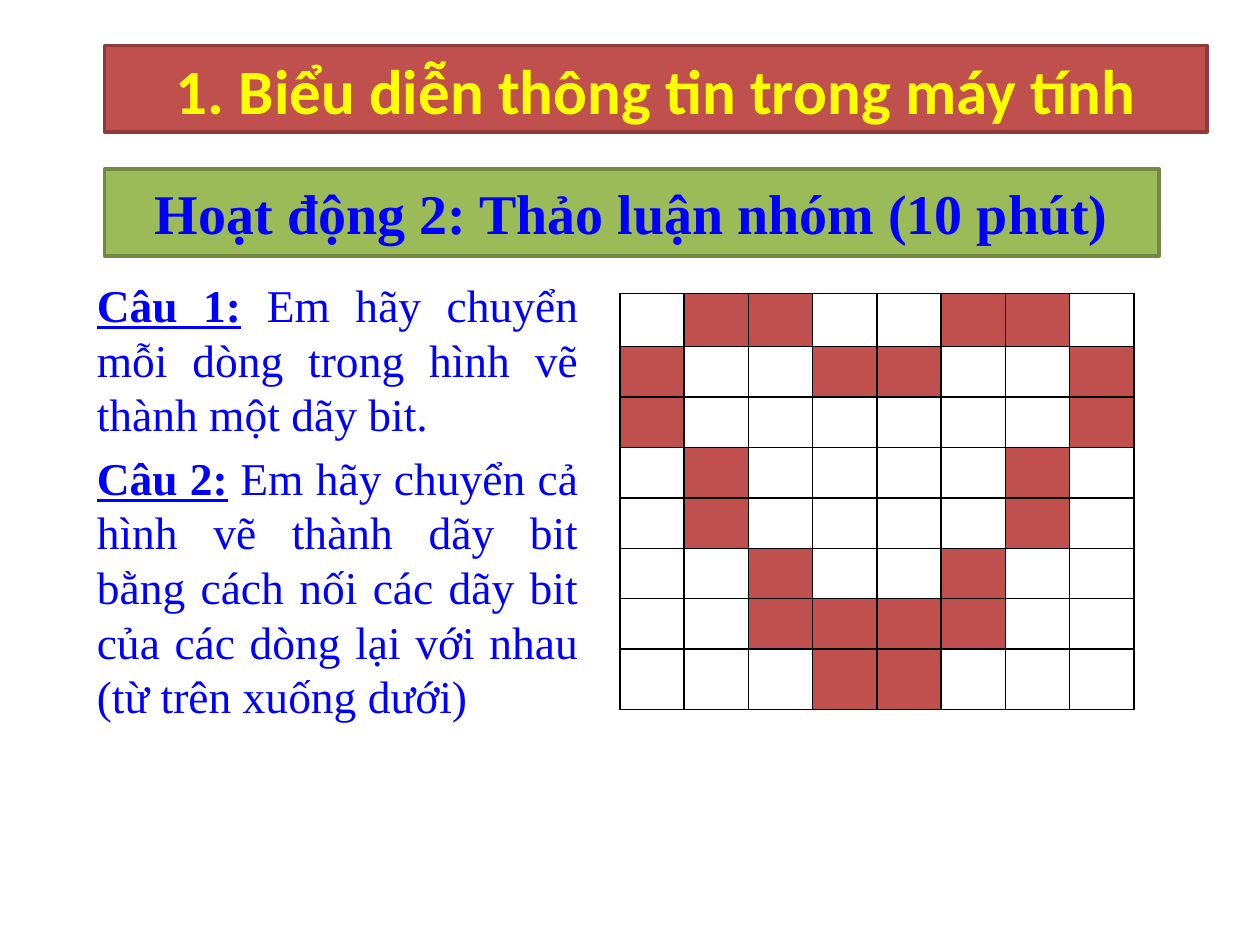
from lxml import etree
from pptx import Presentation
from pptx import util as u
from pptx.dml.color import RGBColor
from pptx.enum import shapes, text
from pptx.oxml import ns

RED = RGBColor(0xC0, 0x50, 0x4D)
DARK_RED = RGBColor(0x8E, 0x3B, 0x39)
GREEN = RGBColor(0x9B, 0xBB, 0x59)
DARK_GREEN = RGBColor(0x73, 0x8A, 0x42)
BLUE = RGBColor(0x00, 0x00, 0xFF)
YELLOW = RGBColor(0xFF, 0xFF, 0x00)
WHITE = RGBColor(0xFF, 0xFF, 0xFF)
SERIF = "Times New Roman"

BANNERS = [
    ("1. Biểu diễn thông tin trong máy tính",
     (0.83, 0.36, 8.75, 0.69), RED, DARK_RED, "Calibri", 36, YELLOW),
    ("Hoạt động 2: Thảo luận nhóm (10 phút)",
     (0.83, 1.34, 8.37, 0.69), GREEN, DARK_GREEN, SERIF, 32, BLUE),
]
QUESTIONS = [
    ("Câu 1:", " Em hãy chuyển mỗi dòng trong hình vẽ thành một dãy bit."),
    ("Câu 2:", " Em hãy chuyển cả hình vẽ thành dãy bit bằng cách nối các dãy bit "
               "của các dòng lại với nhau (từ trên xuống dưới)"),
]
HEART = [
    "01100110",
    "10011001",
    "10000001",
    "01000010",
    "01000010",
    "00100100",
    "00111100",
    "00011000",
]
ROW_HEIGHTS = [0.42] + [0.39] * 6 + [0.48]
COLUMN_WIDTH = 0.51


def set_font(font, name, size, color, bold):
    font.name = name
    font.size = u.Pt(size)
    font.color.rgb = color
    font.bold = bold


def add_banner(slide, label, box, fill, outline, font_name, size, color):
    banner = slide.shapes.add_shape(shapes.MSO_SHAPE.RECTANGLE, *map(u.Inches, box))
    banner.shadow.inherit = False
    banner.fill.solid()
    banner.fill.fore_color.rgb = fill
    banner.line.color.rgb = outline
    banner.line.width = u.Pt(2)
    frame = banner.text_frame
    frame.text = label
    frame.vertical_anchor = text.MSO_ANCHOR.MIDDLE
    paragraph = frame.paragraphs[0]
    paragraph.alignment = text.PP_ALIGN.CENTER
    set_font(paragraph.runs[0].font, font_name, size, color, True)


def add_questions(slide):
    box = slide.shapes.add_textbox(*map(u.Inches, (0.67, 2.15, 4.02, 3.23)))
    frame = box.text_frame
    frame.word_wrap = True
    for index, question in enumerate(QUESTIONS):
        paragraph = frame.add_paragraph() if index else frame.paragraphs[0]
        paragraph.alignment = text.PP_ALIGN.JUSTIFY
        if index:
            paragraph.space_before = u.Pt(5.2)
        for part, is_label in zip(question, (True, False)):
            run = paragraph.add_run()
            run.text = part
            set_font(run.font, SERIF, 26, BLUE, is_label)
            run.font.underline = is_label


def add_borders(cell):
    properties = cell._tc.get_or_add_tcPr()
    for position, side in enumerate(("a:lnL", "a:lnR", "a:lnT", "a:lnB")):
        line = etree.Element(ns.qn(side), w=str(u.Pt(1)))
        fill = etree.SubElement(line, ns.qn("a:solidFill"))
        etree.SubElement(fill, ns.qn("a:srgbClr"), val="000000")
        properties.insert(position, line)


def add_heart(slide):
    columns = len(HEART[0])
    frame = slide.shapes.add_table(
        len(HEART), columns, u.Inches(4.92), u.Inches(2.33),
        u.Inches(COLUMN_WIDTH * columns), u.Inches(sum(ROW_HEIGHTS)))
    table = frame.table
    table.first_row = table.horz_banding = False
    for column in table.columns:
        column.width = u.Inches(COLUMN_WIDTH)
    for row, height, bits in zip(table.rows, ROW_HEIGHTS, HEART):
        row.height = u.Inches(height)
        for cell, bit in zip(row.cells, bits):
            cell.fill.solid()
            cell.fill.fore_color.rgb = RED if bit == "1" else WHITE
            add_borders(cell)


def main():
    presentation = Presentation()
    presentation.slide_width = u.Inches(10)
    presentation.slide_height = u.Inches(7.5)
    slide = presentation.slides.add_slide(presentation.slide_layouts[6])
    for banner in BANNERS:
        add_banner(slide, *banner)
    add_questions(slide)
    add_heart(slide)
    presentation.save("out.pptx")


if __name__ == "__main__":
    main()
